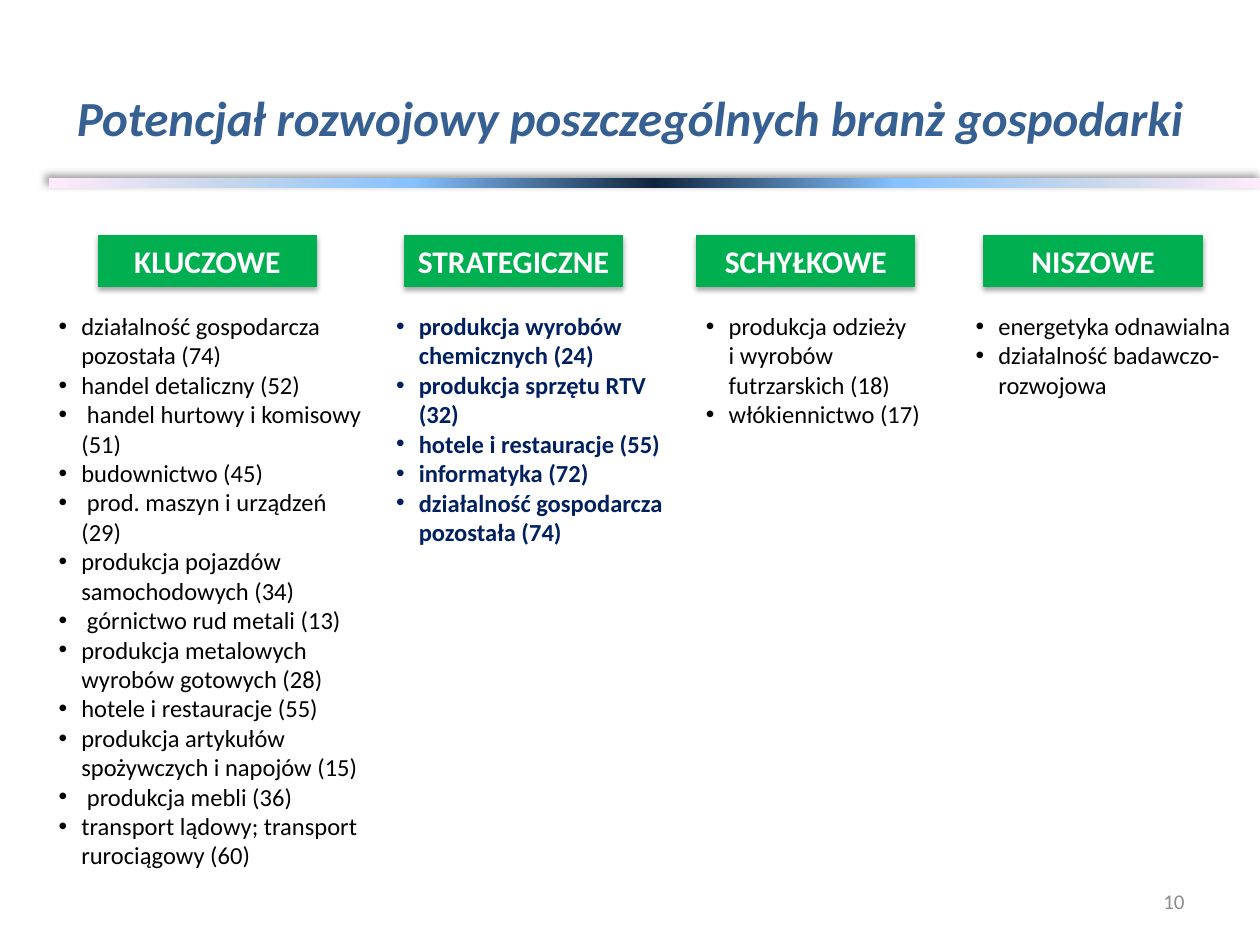
from lxml.etree import SubElement
from pptx import Presentation
from pptx.dml.color import RGBColor
from pptx.enum.shapes import MSO_SHAPE
from pptx.enum.text import MSO_ANCHOR, PP_ALIGN
from pptx.oxml.ns import qn
from pptx.util import Pt

COLOURS = {
    "title": "376092",
    "header": "00B050",
    "header text": "FFFFFF",
    "plain": "000000",
    "strategic": "002060",
    "page": "8C8C8C",
    "shadow": "000000",
}
# Bar gradient from the dark centre outwards: (percent of half width, colour)
BAR_STOPS = [(0, "0F243E"), (40, "85C2FF"), (70, "C4D6EB"), (100, "FFEBFA")]

HEADER_TOP, HEADER_WIDTH, HEADER_HEIGHT = 134.6, 124.6, 29.2
LIST_TOP = 174.2

# header, header left, list left, list width, list height, side inset, colour, bold, items
BRANCHES = [
    ("KLUCZOWE", 56.2, 16.6, 196.6, 348.5, 2.9, "plain", False, [
        "działalność gospodarcza pozostała (74)",
        "handel detaliczny (52)",
        " handel hurtowy i komisowy (51)",
        "budownictwo (45)",
        " prod. maszyn i urządzeń (29)",
        "produkcja pojazdów samochodowych (34)",
        " górnictwo rud metali (13)",
        "produkcja metalowych wyrobów gotowych (28)",
        "hotele i restauracje (55)",
        "produkcja artykułów spożywczych i napojów (15)",
        " produkcja mebli (36)",
        "transport lądowy; transport rurociągowy (60)",
    ]),
    ("STRATEGICZNE", 231.1, 205.2, 183.6, 308.2, 7.2, "strategic", True, [
        "produkcja wyrobów chemicznych (24)",
        "produkcja sprzętu RTV (32)",
        "hotele i restauracje (55)",
        "informatyka (72)",
        "działalność gospodarcza pozostała (74)",
    ]),
    ("SCHYŁKOWE", 398.2, 382.3, 151.9, 308.2, 7.2, "plain", False, [
        "produkcja odzieży \ni wyrobów futrzarskich (18)",
        "włókiennictwo (17)",
    ]),
    ("NISZOWE", 562.3, 536.4, 183.6, 308.2, 7.2, "plain", False, [
        "energetyka odnawialna",
        "działalność badawczo-rozwojowa",
    ]),
]


class SlideBuilder:
    font = "Calibri"

    def __init__(self, slide):
        self.slide = slide

    def add_text(self, paragraph, text, size, colour, bold=False, italic=False):
        for number, line in enumerate(text.split("\n")):
            if number:
                paragraph.add_line_break()
            run = paragraph.add_run()
            run.text = line
            run.font.name = self.font
            run.font.size = Pt(size)
            run.font.bold = bold
            run.font.italic = italic
            run.font.color.rgb = RGBColor.from_string(COLOURS[colour])

    def shadow(self, shape, alpha, blur, distance, angle):
        shape.shadow.inherit = False
        effects = shape._element.spPr.find(qn("a:effectLst"))
        outer = SubElement(effects, qn("a:outerShdw"), blurRad=str(Pt(blur)),
                           dist=str(Pt(distance)), dir=str(angle * 60000), rotWithShape="0")
        colour = SubElement(outer, qn("a:srgbClr"), val=COLOURS["shadow"])
        SubElement(colour, qn("a:alpha"), val=str(alpha * 1000))

    def rectangle(self, left, top, width, height):
        return self.slide.shapes.add_shape(
            MSO_SHAPE.RECTANGLE, Pt(left), Pt(top), Pt(width), Pt(height))

    def gradient_bar(self, left, top, width, height):
        """Horizontal bar whose gradient mirrors about its centre."""
        bar = self.rectangle(left, top, width, height)
        bar.line.fill.background()
        bar.fill.gradient()
        bar.fill.gradient_angle = 0
        stops = bar._element.spPr.find(qn("a:gradFill")).find(qn("a:gsLst"))
        for stop in list(stops):
            stops.remove(stop)
        mirrored = [(50 - p / 2, c) for p, c in reversed(BAR_STOPS)]
        mirrored += [(50 + p / 2, c) for p, c in BAR_STOPS[1:]]
        for position, colour in mirrored:
            stop = SubElement(stops, qn("a:gs"), pos=str(int(position * 1000)))
            SubElement(stop, qn("a:srgbClr"), val=colour)
        self.shadow(bar, 40, 4, 3, 225)

    def header(self, text, left):
        box = self.rectangle(left, HEADER_TOP, HEADER_WIDTH, HEADER_HEIGHT)
        green = RGBColor.from_string(COLOURS["header"])
        box.fill.solid()
        box.fill.fore_color.rgb = green
        box.line.color.rgb = green
        box.line.width = Pt(0.75)
        self.shadow(box, 35, 3.1, 1.8, 90)
        box.text_frame.word_wrap = False
        paragraph = box.text_frame.paragraphs[0]
        paragraph.alignment = PP_ALIGN.CENTER
        self.add_text(paragraph, text, 18, "header text", bold=True)

    def text_frame(self, left, top, width, height, anchor=MSO_ANCHOR.TOP):
        frame = self.slide.shapes.add_textbox(
            Pt(left), Pt(top), Pt(width), Pt(height)).text_frame
        frame.word_wrap = True
        frame.vertical_anchor = anchor
        return frame

    def label(self, text, place, size, colour, alignment, **style):
        paragraph = self.text_frame(*place, MSO_ANCHOR.MIDDLE).paragraphs[0]
        paragraph.alignment = alignment
        self.add_text(paragraph, text, size, colour, **style)

    def bullets(self, items, place, inset, colour, bold):
        frame = self.text_frame(*place)
        frame.margin_left = frame.margin_right = Pt(inset)
        for number, item in enumerate(items):
            paragraph = frame.add_paragraph() if number else frame.paragraphs[0]
            properties = paragraph._p.get_or_add_pPr()
            properties.set("marL", str(Pt(27)))
            properties.set("indent", str(Pt(-13)))
            SubElement(properties, qn("a:buFont"), typeface="Arial")
            SubElement(properties, qn("a:buChar"), char="•")
            self.add_text(paragraph, item, 14, colour, bold)


def main():
    deck = Presentation()
    deck.slide_width, deck.slide_height = Pt(720), Pt(540)
    builder = SlideBuilder(deck.slides.add_slide(deck.slide_layouts[6]))

    builder.gradient_bar(28, 101.5, 692, 5.8)
    builder.label("Potencjał rozwojowy poszczególnych branż gospodarki",
                  (36, 21.6, 648, 90), 28, "title", PP_ALIGN.CENTER, bold=True, italic=True)
    for name, header_left, left, width, height, inset, colour, bold, items in BRANCHES:
        builder.header(name, header_left)
        builder.bullets(items, (left, LIST_TOP, width, height), inset, colour, bold)
    builder.label("10", (516.2, 500.4, 167.8, 28.8), 12, "page", PP_ALIGN.RIGHT)

    deck.save("out.pptx")


if __name__ == "__main__":
    main()
